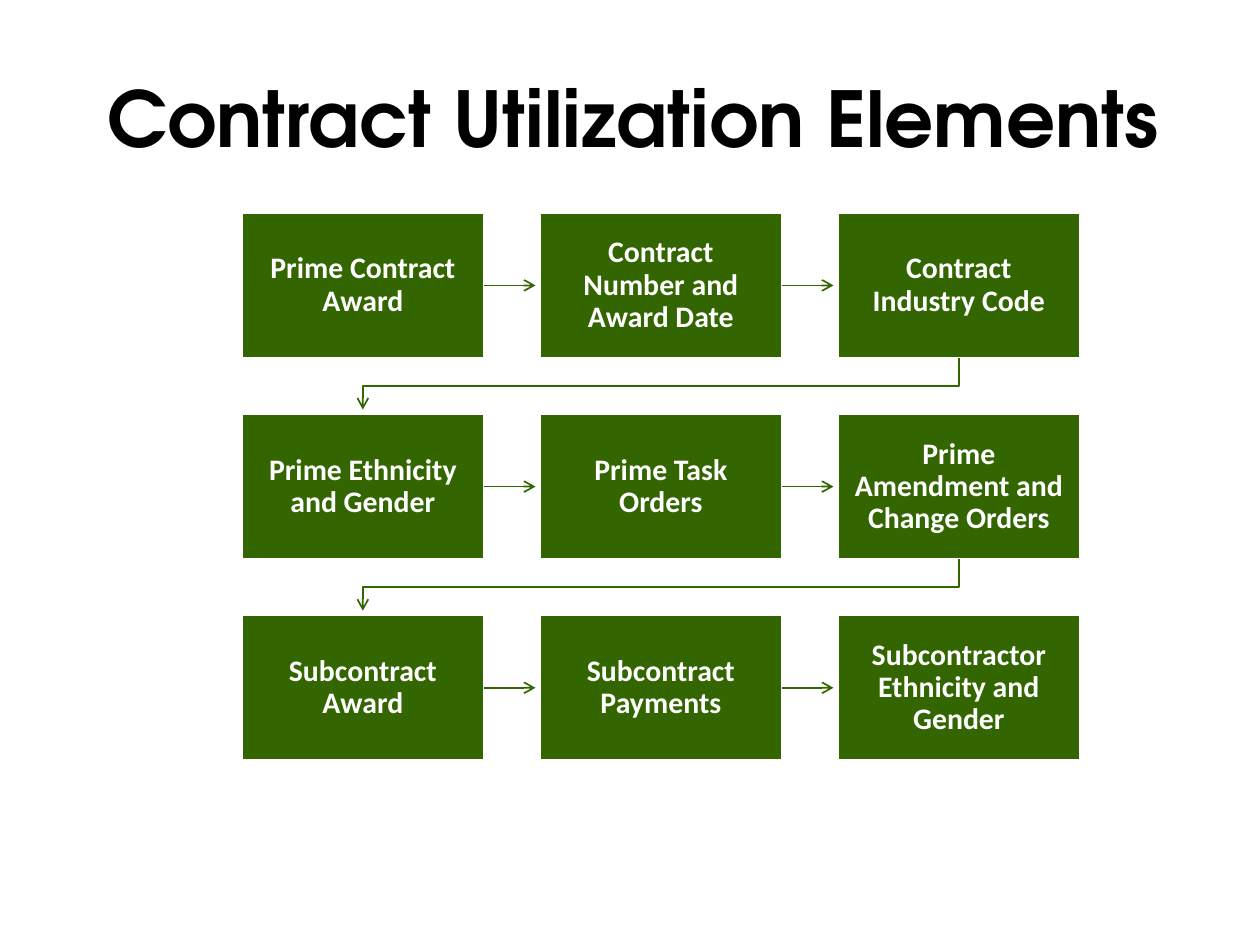
from lxml import etree
from pptx import Presentation
from pptx.dml.color import RGBColor
from pptx.enum.shapes import MSO_CONNECTOR, MSO_SHAPE
from pptx.enum.text import MSO_ANCHOR, MSO_AUTO_SIZE, PP_ALIGN
from pptx.oxml.ns import qn
from pptx.util import Inches, Pt

RECTANGLE = MSO_SHAPE.RECTANGLE
STRAIGHT = MSO_CONNECTOR.STRAIGHT
MIDDLE = MSO_ANCHOR.MIDDLE
NO_AUTOFIT = MSO_AUTO_SIZE.NONE
LEFT, CENTER = PP_ALIGN.LEFT, PP_ALIGN.CENTER
RIGHT_SIDE = 3

GREEN, WHITE, BLACK = "336600", "FFFFFF", "000000"
GRID_LEFT, GRID_TOP = 1.92, 1.69
BOX_WIDTH, BOX_HEIGHT = 1.92, 1.15
COLUMN_STEP, ROW_STEP = 2.365, 1.597
ARROW_LENGTH = 0.41

STEPS = [
    ["Prime Contract Award", "Contract Number and Award Date", "Contract Industry Code"],
    ["Prime Ethnicity and Gender", "Prime Task Orders", "Prime Amendment and Change Orders"],
    ["Subcontract Award", "Subcontract Payments", "Subcontractor Ethnicity and Gender"],
]


def color(value):
    return RGBColor.from_string(value)


def set_font(para, name, size, value):
    para.font.name = name
    para.font.size = Pt(size)
    para.font.bold = True
    para.font.color.rgb = color(value)


def set_title(page, text):
    title = page.shapes.title
    title.left, title.top = Inches(0.75), Inches(0.3)
    title.width, title.height = Inches(9.42), Inches(1.25)
    frame = title.text_frame
    frame.text = text
    frame.word_wrap = True
    frame.auto_size = NO_AUTOFIT
    frame.vertical_anchor = MIDDLE
    para = frame.paragraphs[0]
    para.alignment = LEFT
    set_font(para, "TeX Gyre Adventor", 44, BLACK)


def add_step(page, text, row, column):
    box = page.shapes.add_shape(
        RECTANGLE,
        Inches(GRID_LEFT + column * COLUMN_STEP), Inches(GRID_TOP + row * ROW_STEP),
        Inches(BOX_WIDTH), Inches(BOX_HEIGHT),
    )
    box.shadow.inherit = False
    box.fill.solid()
    box.fill.fore_color.rgb = color(GREEN)
    box.line.color.rgb = color(WHITE)
    box.line.width = Pt(1)
    frame = box.text_frame
    frame.word_wrap = True
    frame.vertical_anchor = MIDDLE
    frame.margin_left = frame.margin_right = Inches(0.13)
    frame.margin_top = frame.margin_bottom = Inches(0.13)
    frame.text = text
    para = frame.paragraphs[0]
    para.alignment = CENTER
    para.line_spacing = 0.9
    set_font(para, "Calibri", 17, WHITE)
    return box


def style_arrow(arrow):
    arrow.line.color.rgb = color(GREEN)
    arrow.line.width = Pt(1)
    etree.SubElement(arrow.line._get_or_add_ln(), qn("a:tailEnd"), type="arrow")


def add_next_arrow(page, box):
    """Point from a box to the one on its right, stopping just short of it."""
    start = box.left + box.width
    middle = box.top + box.height // 2
    arrow = page.shapes.add_connector(
        STRAIGHT, start, middle, start + Inches(ARROW_LENGTH), middle)
    arrow.begin_connect(box, RIGHT_SIDE)
    style_arrow(arrow)
    etree.SubElement(arrow._element.spPr, qn("a:effectLst"))


def add_return_arrow(page, last, first):
    """Lead from the last box of a row down to the first box of the next row."""
    start_x = last.left + last.width // 2
    end_x = first.left + first.width // 2
    top = last.top + last.height
    turn = (top + first.top) // 2
    builder = page.shapes.build_freeform(start_x, top)
    builder.add_line_segments(
        [(start_x, turn), (end_x, turn), (end_x, top + Inches(ARROW_LENGTH))], close=False)
    arrow = builder.convert_to_shape()
    arrow.shadow.inherit = False
    arrow.fill.background()
    style_arrow(arrow)


def main():
    deck = Presentation()
    deck.slide_width, deck.slide_height = Inches(10), Inches(7.5)
    page = deck.slides.add_slide(deck.slide_layouts[5])
    set_title(page, "Contract Utilization Elements")
    rows = [
        [add_step(page, text, row, column) for column, text in enumerate(texts)]
        for row, texts in enumerate(STEPS)
    ]
    for boxes in rows:
        for box in boxes[:-1]:
            add_next_arrow(page, box)
    for upper, lower in zip(rows, rows[1:]):
        add_return_arrow(page, upper[-1], lower[0])
    deck.save("out.pptx")


if __name__ == "__main__":
    main()
